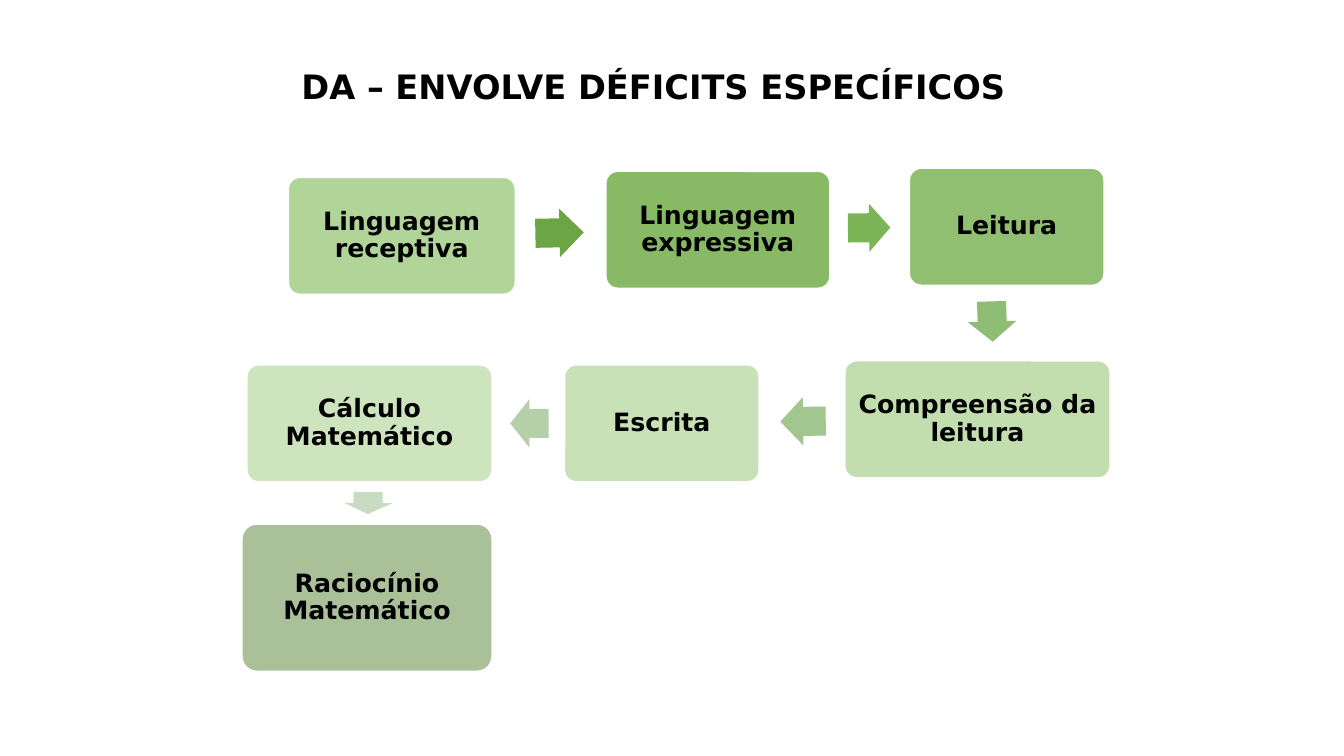
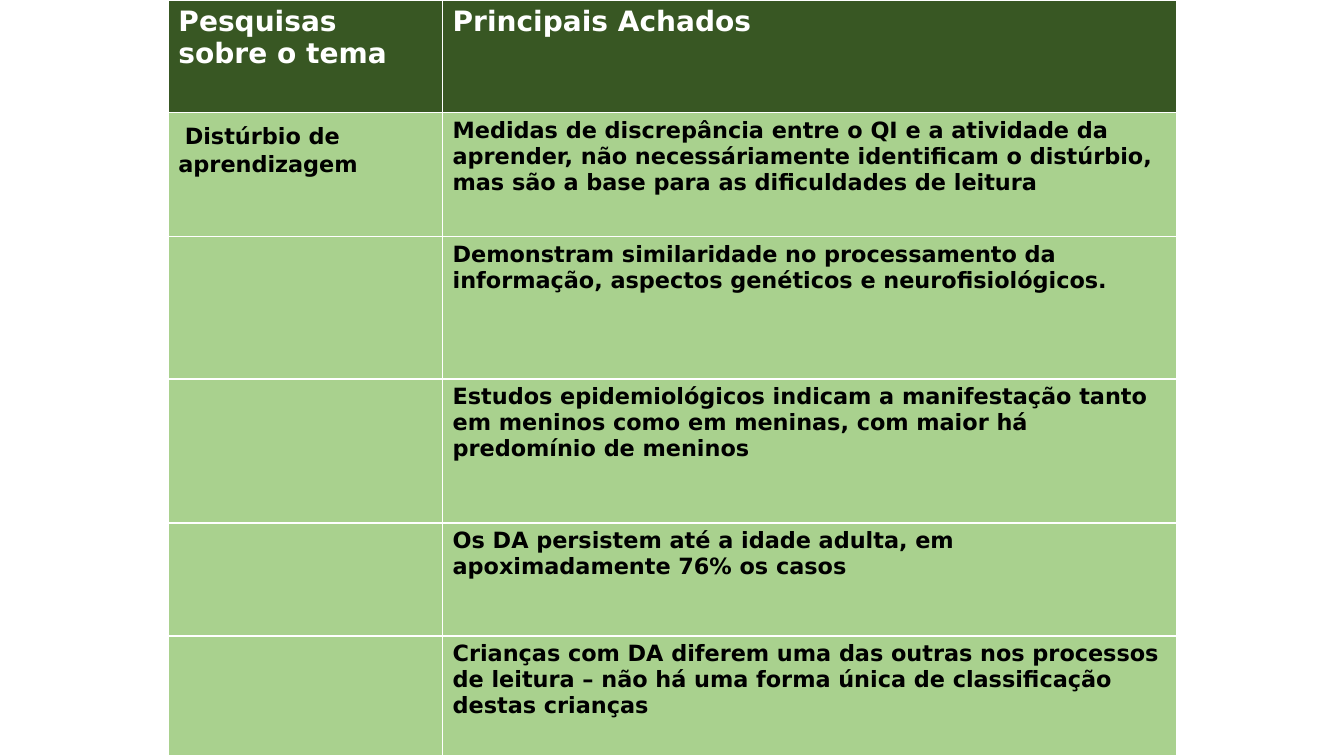
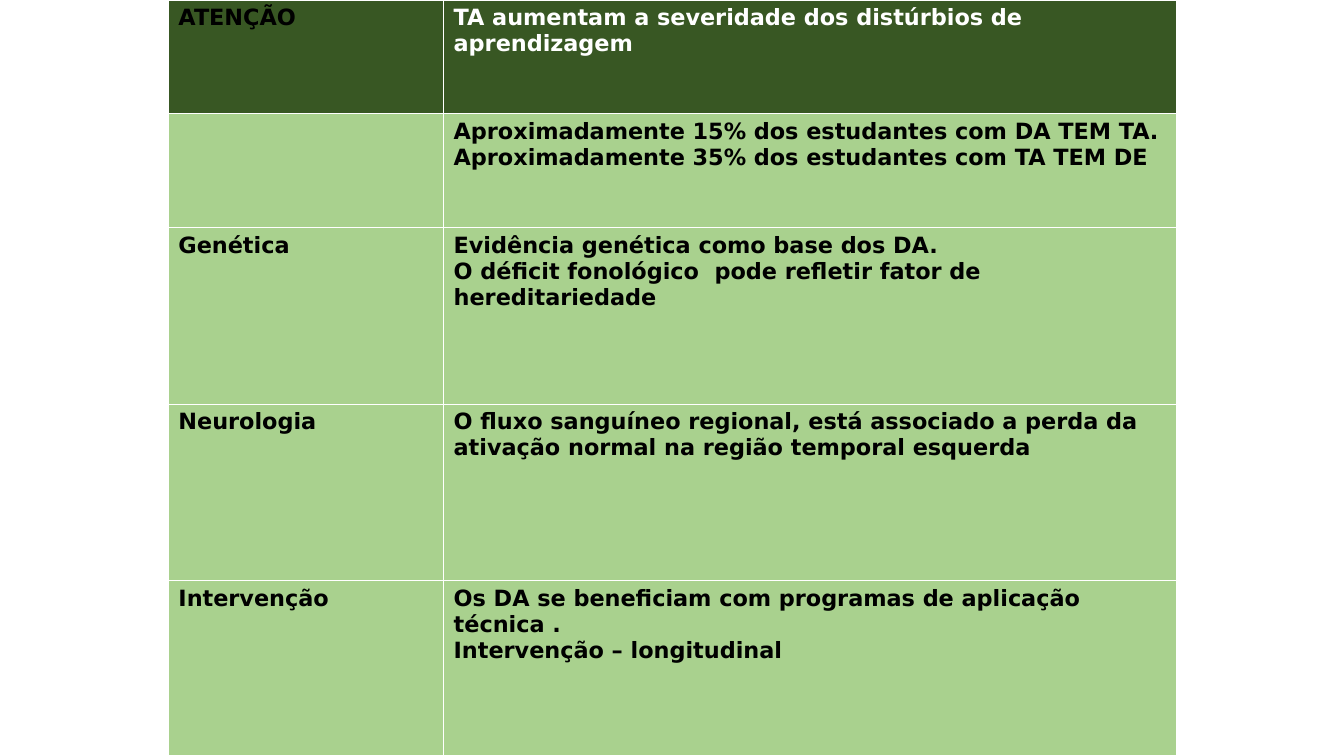
import dataclasses
import typing

import lxml.etree
import pptx
import pptx.dml.color
import pptx.enum.shapes
import pptx.enum.text
import pptx.oxml.ns
import pptx.util

EMU_PER_PX = 9144
SLIDE_WIDTH, SLIDE_HEIGHT = 1333, 750
TABLE_LEFT = 167
FONT = "DejaVu Sans"
COLORS = {
    "white": "FFFFFF",
    "black": "000000",
    "header": "385723",
    "light": "A9D18E",
    "medium": "70AD47",
    "dark": "548235",
}


@dataclasses.dataclass(frozen=True)
class Box:
    left: int
    top: int
    width: int
    height: int


@dataclasses.dataclass(frozen=True)
class Step:
    box: Box
    text: str
    color: str
    opacity: int


@dataclasses.dataclass(frozen=True)
class Arrow:
    box: Box
    rotation: float
    fill: str


@dataclasses.dataclass(frozen=True)
class TextRun:
    text: str
    size: int = 16
    color: str = "black"
    font: str = FONT


Paragraphs = list[list[TextRun]]


@dataclasses.dataclass(frozen=True)
class TableContent:
    column_widths: list[int]
    row_heights: list[int]
    rows: list[list[Paragraphs]]


def lines(*texts: str, size: int = 16, color: str = "black") -> Paragraphs:
    return [[TextRun(text, size, color)] for text in texts]


STEPS = [
    Step(Box(286, 176, 225, 116), "Linguagem receptiva", "light", 90),
    Step(Box(601, 170, 222, 116), "Linguagem expressiva", "medium", 83),
    Step(Box(902, 167, 193, 116), "Leitura", "medium", 77),
    Step(Box(838, 358, 263, 116), "Compreensão da leitura", "light", 70),
    Step(Box(560, 362, 193, 116), "Escrita", "light", 63),
    Step(Box(245, 362, 243, 116), "Cálculo Matemático", "light", 57),
    Step(Box(240, 520, 248, 146), "Raciocínio Matemático", "dark", 50),
]

ARROWS = [
    Arrow(Box(531, 207, 48, 48), 358.9, "6BA544"),
    Arrow(Box(841, 202, 42, 48), 359.4, "7BB558"),
    Arrow(Box(964, 295, 40, 48), 88.3, "8EBD74"),
    Arrow(Box(774, 394, 45, 48), 179.2, "A1C68F"),
    Arrow(Box(506, 396, 38, 48), 180, "B5D0A9"),
    Arrow(Box(354, 475, 22, 48), 90.7, "C9DBC1"),
]

TABLES = [
    TableContent(
        [272, 728],
        [112, 123, 141, 143, 112, 119],
        [
            [
                lines("Pesquisas sobre o tema", size=20, color="white"),
                lines("Principais Achados", size=20, color="white"),
            ],
            [
                [[TextRun(" ", 20, font="Calibri"), TextRun("Distúrbio de aprendizagem")]],
                lines(
                    "Medidas de discrepância entre o QI e a atividade da aprender, "
                    "não necessáriamente identificam o distúrbio, mas são a base "
                    "para as dificuldades de leitura"
                ),
            ],
            [
                [],
                lines(
                    "Demonstram similaridade no processamento da informação, "
                    "aspectos genéticos e neurofisiológicos."
                ),
            ],
            [
                [],
                lines(
                    "Estudos epidemiológicos indicam a manifestação tanto em meninos "
                    "como em meninas, com maior há predomínio de meninos"
                ),
            ],
            [
                [],
                lines("Os DA persistem até a idade adulta, em apoximadamente 76% os casos"),
            ],
            [
                [],
                lines(
                    "Crianças com DA diferem uma das outras nos processos de leitura "
                    "– não há uma forma única de classificação destas crianças"
                ),
            ],
        ],
    ),
    TableContent(
        [273, 727],
        [113, 113, 175, 175, 174],
        [
            [
                lines("ATENÇÃO"),
                lines("TA aumentam a severidade dos distúrbios de aprendizagem", color="white"),
            ],
            [
                [],
                lines(
                    "Aproximadamente 15% dos estudantes com DA TEM TA.",
                    "Aproximadamente 35% dos estudantes com TA TEM DE",
                ),
            ],
            [
                lines("Genética"),
                lines(
                    "Evidência genética como base dos DA.",
                    "O déficit fonológico  pode refletir fator de hereditariedade",
                ),
            ],
            [
                lines("Neurologia"),
                lines(
                    "O fluxo sanguíneo regional, está associado a perda da ativação "
                    "normal na região temporal esquerda"
                ),
            ],
            [
                lines("Intervenção"),
                lines(
                    "Os DA se beneficiam com programas de aplicação técnica .",
                    "Intervenção – longitudinal",
                ),
            ],
        ],
    ),
]


def px(length: int) -> pptx.util.Emu:
    return pptx.util.Emu(length * EMU_PER_PX)


def place(box: Box) -> list[pptx.util.Emu]:
    return [px(length) for length in dataclasses.astuple(box)]


def rgb(color: str) -> pptx.dml.color.RGBColor:
    return pptx.dml.color.RGBColor.from_string(COLORS.get(color, color))


def apply_format(target: typing.Any, values: dict[str, typing.Any]) -> None:
    for name, value in values.items():
        setattr(target, name, value)


def fill_solid(target: typing.Any, color: str) -> None:
    target.fill.solid()
    target.fill.fore_color.rgb = rgb(color)


def write_text(
    text_frame: typing.Any,
    paragraphs: Paragraphs,
    paragraph_format: typing.Optional[dict[str, typing.Any]] = None,
) -> None:
    for index, text_runs in enumerate(paragraphs):
        paragraph = text_frame.add_paragraph() if index else text_frame.paragraphs[0]
        apply_format(paragraph, paragraph_format or {})
        for text_run in text_runs:
            run = paragraph.add_run()
            run.text = text_run.text
            apply_format(
                run.font,
                {"name": text_run.font, "size": pptx.util.Pt(text_run.size), "bold": True},
            )
            run.font.color.rgb = rgb(text_run.color)


def draw_title(slide: typing.Any, text: str) -> None:
    shape = slide.shapes.add_textbox(*place(Box(167, 47, 966, 64)))
    apply_format(
        shape.text_frame,
        {"word_wrap": True, "margin_left": px(132), "margin_top": px(18)},
    )
    write_text(shape.text_frame, lines(text, size=24))


def draw_step(slide: typing.Any, step: Step) -> None:
    shape = slide.shapes.add_shape(
        pptx.enum.shapes.MSO_SHAPE.ROUNDED_RECTANGLE, *place(step.box)
    )
    shape.adjustments[0] = 0.1
    shape.shadow.inherit = False
    fill_solid(shape, step.color)
    color_element = shape.fill._xPr.find(".//" + pptx.oxml.ns.qn("a:srgbClr"))
    lxml.etree.SubElement(
        color_element, pptx.oxml.ns.qn("a:alpha"), val=str(step.opacity * 1000)
    )
    shape.line.color.rgb = rgb("white")
    shape.line.width = pptx.util.Pt(1)
    margins = {f"margin_{side}": px(7) for side in ("left", "top", "right", "bottom")}
    apply_format(
        shape.text_frame,
        {
            "word_wrap": True,
            "vertical_anchor": pptx.enum.text.MSO_ANCHOR.MIDDLE,
            **margins,
        },
    )
    write_text(
        shape.text_frame,
        lines(step.text, size=18),
        {"alignment": pptx.enum.text.PP_ALIGN.CENTER, "line_spacing": 0.9},
    )


def draw_arrow(slide: typing.Any, arrow: Arrow) -> None:
    shape = slide.shapes.add_shape(
        pptx.enum.shapes.MSO_SHAPE.RIGHT_ARROW, *place(arrow.box)
    )
    shape.adjustments[0] = 0.6
    shape.adjustments[1] = 0.5
    shape.rotation = arrow.rotation
    shape.shadow.inherit = False
    fill_solid(shape, arrow.fill)
    shape.line.fill.background()


def draw_cell_borders(cell: typing.Any) -> None:
    properties = cell._tc.get_or_add_tcPr()
    for index, side in enumerate("LRTB"):
        border = lxml.etree.Element(
            pptx.oxml.ns.qn(f"a:ln{side}"), w=str(pptx.util.Pt(1))
        )
        fill = lxml.etree.SubElement(border, pptx.oxml.ns.qn("a:solidFill"))
        lxml.etree.SubElement(fill, pptx.oxml.ns.qn("a:srgbClr"), val=COLORS["white"])
        properties.insert(index, border)


def draw_table(slide: typing.Any, content: TableContent) -> None:
    box = Box(TABLE_LEFT, 0, sum(content.column_widths), sum(content.row_heights))
    table = slide.shapes.add_table(
        len(content.row_heights), len(content.column_widths), *place(box)
    ).table
    table.horz_banding = False
    for column, width in zip(table.columns, content.column_widths):
        column.width = px(width)
    for row, height in zip(table.rows, content.row_heights):
        row.height = px(height)
    for row_index, row_content in enumerate(content.rows):
        for column_index, paragraphs in enumerate(row_content):
            cell = table.cell(row_index, column_index)
            fill_solid(cell, "light" if row_index else "header")
            draw_cell_borders(cell)
            write_text(cell.text_frame, paragraphs)


def main() -> None:
    presentation = pptx.Presentation()
    apply_format(
        presentation, {"slide_width": px(SLIDE_WIDTH), "slide_height": px(SLIDE_HEIGHT)}
    )
    blank_layout = presentation.slide_layouts[6]

    slide = presentation.slides.add_slide(blank_layout)
    draw_title(slide, "DA – ENVOLVE DÉFICITS ESPECÍFICOS")
    for step in STEPS:
        draw_step(slide, step)
    for arrow in ARROWS:
        draw_arrow(slide, arrow)

    for content in TABLES:
        draw_table(presentation.slides.add_slide(blank_layout), content)

    presentation.save("out.pptx")


if __name__ == "__main__":
    main()
